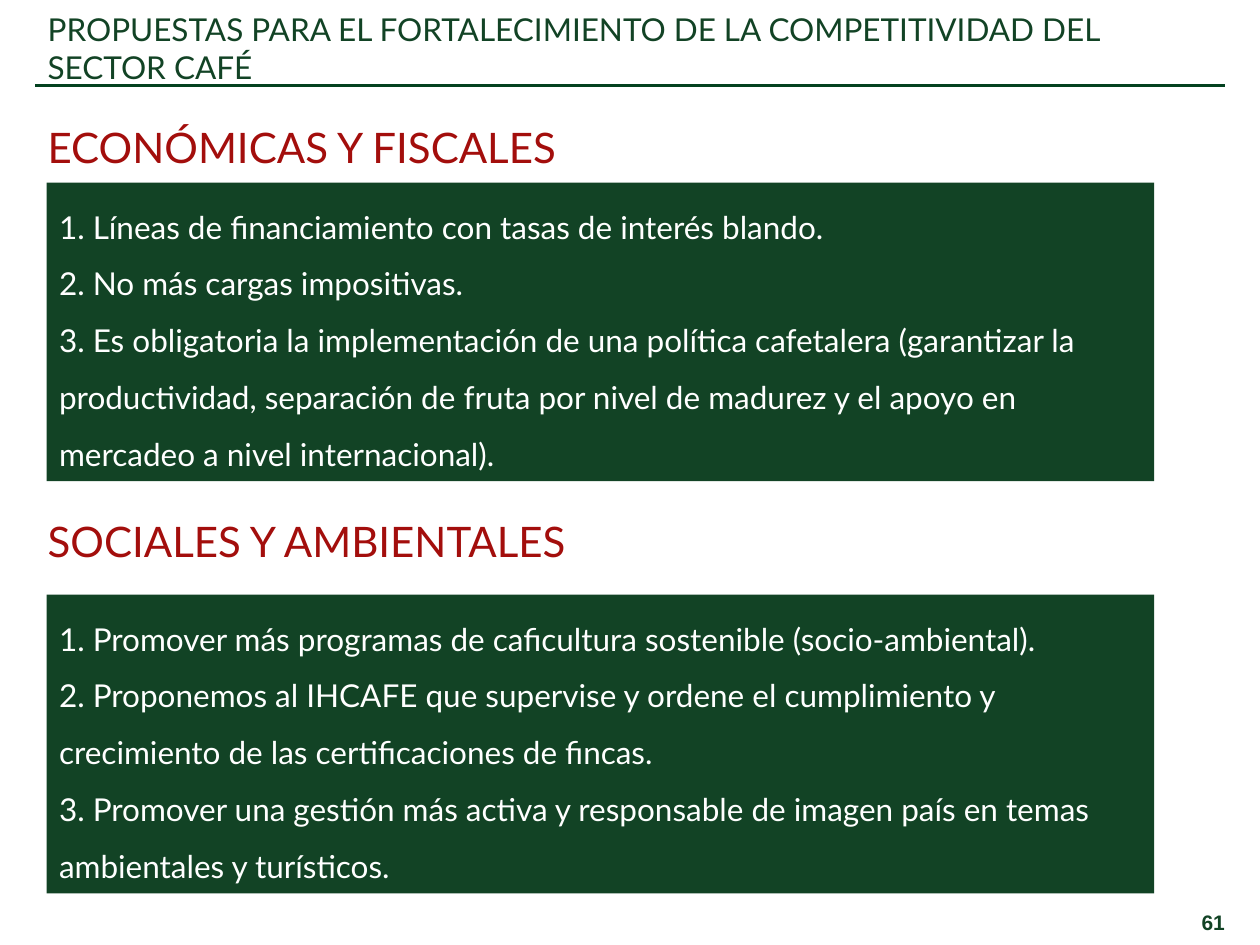
from pptx import Presentation
from pptx.dml.color import RGBColor
from pptx.enum.shapes import MSO_CONNECTOR, MSO_SHAPE
from pptx.enum.text import MSO_ANCHOR, PP_ALIGN
from pptx.oxml.ns import qn
from pptx.util import Inches, Pt
from lxml.etree import SubElement

GREEN = "124325"
RED = "A30E0C"
WHITE = "FFFFFF"

TITLE = "PROPUESTAS PARA EL FORTALECIMIENTO DE LA COMPETITIVIDAD DEL SECTOR CAFÉ"
PARTS = [
    ("ECONÓMICAS Y FISCALES", 0.97, 1.45, [
        "1. Líneas de financiamiento con tasas de interés blando.",
        "2. No más cargas impositivas.",
        "3. Es obligatoria la implementación de una política cafetalera (garantizar la "
        "productividad, separación de fruta por nivel de madurez y el apoyo en "
        "mercadeo a nivel internacional).",
    ]),
    ("SOCIALES Y AMBIENTALES", 4.1, 4.72, [
        "1. Promover más programas de caficultura sostenible (socio-ambiental).",
        "2. Proponemos al IHCAFE que supervise y ordene el cumplimiento y "
        "crecimiento de las certificaciones de fincas.",
        "3. Promover una gestión más activa y responsable de imagen país en temas "
        "ambientales y turísticos.",
    ]),
]


def color(code):
    """Turn a hex string into a colour."""
    return RGBColor.from_string(code)


def write(frame, lines, size=18, font="Lato", ink=GREEN, bold=False,
          align=PP_ALIGN.LEFT, anchor=MSO_ANCHOR.MIDDLE, spacing=None):
    """Fill a text frame with one paragraph per line."""
    frame.word_wrap = True
    frame.vertical_anchor = anchor
    for index, line in enumerate(lines):
        para = frame.add_paragraph() if index else frame.paragraphs[0]
        para.alignment = align
        para.line_spacing = spacing
        run = para.add_run()
        run.text = line
        run.font.size = Pt(size)
        run.font.name = font
        run.font.bold = bold
        run.font.color.rgb = color(ink)


def add_label(slide, text, left, top, width, height, **style):
    """Add a text box with a single paragraph."""
    box = slide.shapes.add_textbox(
        Inches(left), Inches(top), Inches(width), Inches(height))
    write(box.text_frame, [text], **style)


def add_panel(slide, lines, top):
    """Add a green panel that lists proposals."""
    panel = slide.shapes.add_shape(
        MSO_SHAPE.RECTANGLE, Inches(0.37), Inches(top), Inches(8.79), Inches(2.37))
    panel.shadow.inherit = False
    panel.fill.solid()
    panel.fill.fore_color.rgb = color(GREEN)
    panel.line.fill.background()
    write(panel.text_frame, lines, ink=WHITE, anchor=MSO_ANCHOR.TOP, spacing=1.5)


def add_rule(slide, left, right, top):
    """Add the horizontal rule under the title."""
    rule = slide.shapes.add_connector(
        MSO_CONNECTOR.STRAIGHT, Inches(left), Inches(top), Inches(right), Inches(top))
    rule.line.color.rgb = color("03411F")
    rule.line.width = Pt(2)
    SubElement(rule._element.spPr, qn("a:effectLst"))


def main():
    """Build and save the slide."""
    deck = Presentation()
    deck.slide_width, deck.slide_height = Inches(10), Inches(7.5)
    slide = deck.slides.add_slide(deck.slide_layouts[6])
    add_rule(slide, 0.28, 9.72, 0.68)
    add_label(slide, "61", 9.16, 7.2, 0.66, 0.24, size=12, font="Arial",
              bold=True, align=PP_ALIGN.RIGHT)
    add_label(slide, TITLE, 0.28, 0.06, 8.74, 0.64)
    for heading, head_top, panel_top, lines in PARTS:
        add_label(slide, heading, 0.28, head_top, 8.51, 0.38, size=24, ink=RED)
        add_panel(slide, lines, panel_top)
    deck.save("out.pptx")


if __name__ == "__main__":
    main()
